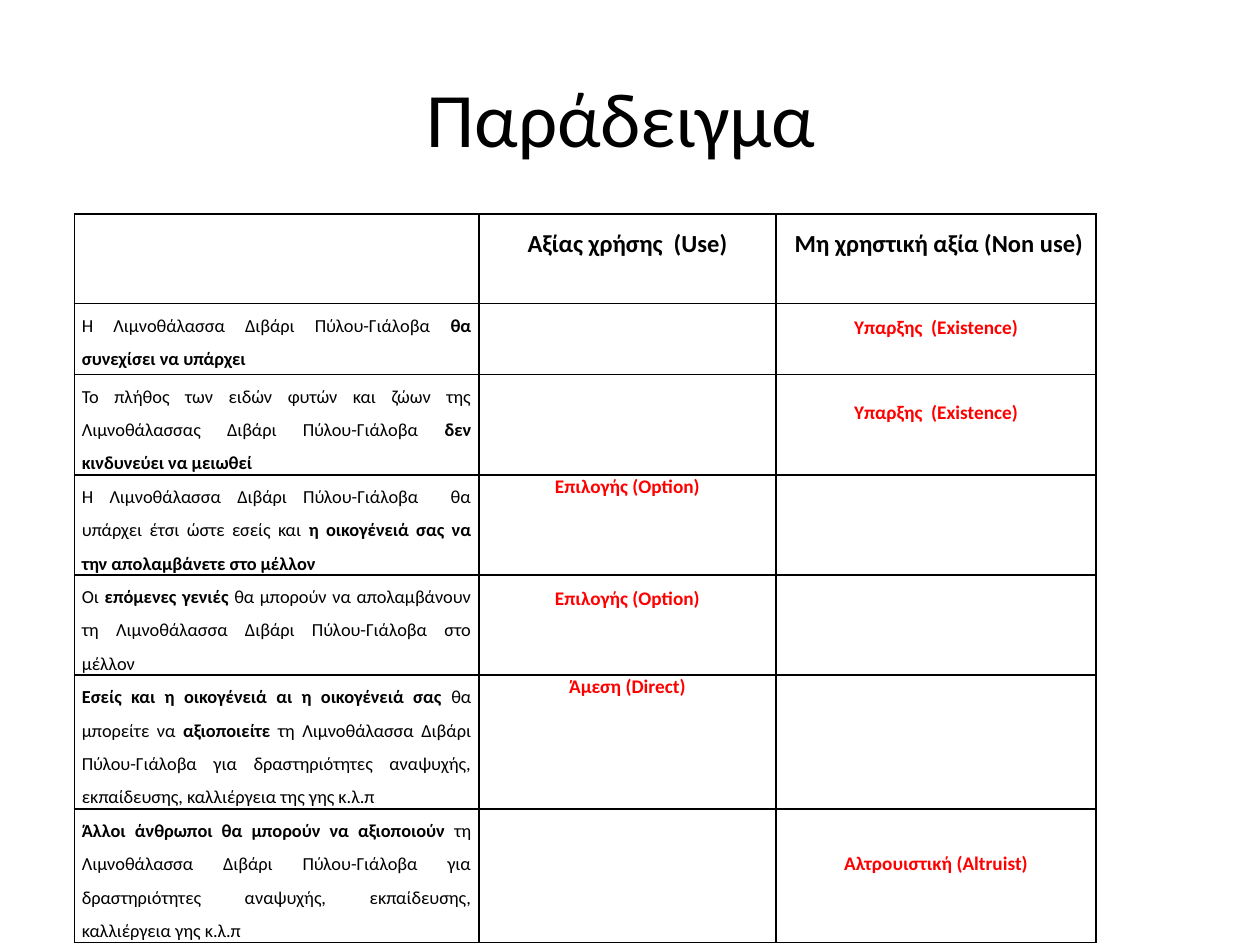
from lxml import etree
from pptx import Presentation
from pptx.dml.color import RGBColor
from pptx.enum.text import MSO_ANCHOR, PP_ALIGN
from pptx.oxml.ns import qn
from pptx.util import Inches, Pt

CENTER, JUSTIFY = PP_ALIGN.CENTER, PP_ALIGN.JUSTIFY
TOP, MIDDLE = MSO_ANCHOR.TOP, MSO_ANCHOR.MIDDLE
TITLE_ONLY = 5
FONT, BLACK, RED = "Calibri", "000000", "FF0000"

COLUMN_WIDTHS = [3.21, 2.36, 2.54]
ROW_HEIGHTS = [0.71, 0.56, 0.79, 0.79, 0.79, 1.06, 1.06]
HEADERS = ["Αξίας χρήσης  (Use)", " Μη χρηστική αξία (Non use)"]
STATEMENTS = [
    "Η Λιμνοθάλασσα Διβάρι Πύλου-Γιάλοβα *θα συνεχίσει να υπάρχει*",
    "Το πλήθος των ειδών φυτών και ζώων της Λιμνοθάλασσας Διβάρι "
    "Πύλου-Γιάλοβα *δεν κινδυνεύει να μειωθεί*",
    "Η Λιμνοθάλασσα Διβάρι Πύλου-Γιάλοβα  θα υπάρχει έτσι ώστε εσείς και "
    "*η οικογένειά σας να την απολαμβάνετε στο μέλλον*",
    "Οι *επόμενες γενιές *θα μπορούν να απολαμβάνουν τη Λιμνοθάλασσα "
    "Διβάρι Πύλου-Γιάλοβα στο μέλλον",
    "*Εσείς και η οικογένειά αι η οικογένειά σας *θα μπορείτε να "
    "*αξιοποιείτε* τη Λιμνοθάλασσα Διβάρι Πύλου-Γιάλοβα για "
    "δραστηριότητες αναψυχής, εκπαίδευσης, καλλιέργεια της γης κ.λ.π",
    "*Άλλοι άνθρωποι θα μπορούν να αξιοποιούν *τη Λιμνοθάλασσα Διβάρι "
    "Πύλου-Γιάλοβα για δραστηριότητες αναψυχής, εκπαίδευσης, "
    "καλλιέργεια γης κ.λ.π",
]
# column, text, anchor, line spacing, bottom margin
VALUES = [
    (2, "Υπαρξης  (Existence)", MIDDLE, 1.5, 0.28),
    (2, "Υπαρξης  (Existence)", MIDDLE, 1, 0.19),
    (1, "Επιλογής (Option)", TOP, 1, 0),
    (1, "Επιλογής (Option)", TOP, 1.5, 0),
    (1, "Άμεση (Direct)", TOP, 1, 0),
    (2, "Αλτρουιστική (Altruist)", MIDDLE, 1, 0.19),
]


def rgb(value):
    return RGBColor.from_string(value)


class SlideBuilder:
    """Holds the style and the current slide and adds its elements."""

    def __init__(self, presentation):
        layout = presentation.slide_layouts[TITLE_ONLY]
        self.slide = presentation.slides.add_slide(layout)

    def add_run(self, paragraph, text, size, color=BLACK, bold=False):
        run = paragraph.add_run()
        run.text = text
        run.font.name = FONT
        run.font.size = Pt(size)
        run.font.bold = bold
        run.font.color.rgb = rgb(color)

    def add_title(self, text, left, top, width, height):
        title = self.slide.shapes.title
        title.left, title.top = Inches(left), Inches(top)
        title.width, title.height = Inches(width), Inches(height)
        title.text_frame.vertical_anchor = MIDDLE
        paragraph = title.text_frame.paragraphs[0]
        paragraph.alignment = CENTER
        self.add_run(paragraph, text, 44)

    def add_table(self, left, top, column_widths, row_heights):
        frame = self.slide.shapes.add_table(
            len(row_heights), len(column_widths), Inches(left), Inches(top),
            Inches(sum(column_widths)), Inches(sum(row_heights)))
        table = frame.table
        table.first_row = table.horz_banding = False
        for column, width in zip(table.columns, column_widths):
            column.width = Inches(width)
        for row, height in zip(table.rows, row_heights):
            row.height = Inches(height)
        for cell in table.iter_cells():
            cell.fill.background()
            self.add_borders(cell)
        return table

    def add_borders(self, cell):
        properties = cell._tc.get_or_add_tcPr()
        for index, side in enumerate(("a:lnL", "a:lnR", "a:lnT", "a:lnB")):
            line = etree.Element(qn(side), w=str(Pt(1)))
            fill = etree.SubElement(line, qn("a:solidFill"))
            etree.SubElement(fill, qn("a:srgbClr"), val=BLACK)
            properties.insert(index, line)

    def fill_cell(self, cell, text, size, color=BLACK, alignment=CENTER,
                  anchor=TOP, spacing=1.5, bottom=0):
        cell.margin_left = cell.margin_right = Inches(0.06)
        cell.margin_top, cell.margin_bottom = 0, Inches(bottom)
        cell.vertical_anchor = anchor
        paragraph = cell.text_frame.paragraphs[0]
        paragraph.alignment = alignment
        paragraph.line_spacing = float(spacing)
        for index, part in enumerate(text.split("*")):
            if part:
                self.add_run(paragraph, part, size, color, index % 2 == 1)


def main():
    presentation = Presentation()
    presentation.slide_width, presentation.slide_height = Inches(10), Inches(7.5)
    builder = SlideBuilder(presentation)
    builder.add_title("Παράδειγμα ", 0.5, 0.3, 9, 1.25)
    table = builder.add_table(0.59, 1.7, COLUMN_WIDTHS, ROW_HEIGHTS)
    for column, header in enumerate(HEADERS, start=1):
        builder.fill_cell(table.cell(0, column), f"*{header}*", 14, bottom=0.35)
    for row, (statement, value) in enumerate(zip(STATEMENTS, VALUES), start=1):
        builder.fill_cell(table.cell(row, 0), statement, 10.5, alignment=JUSTIFY)
        column, text, anchor, spacing, bottom = value
        builder.fill_cell(table.cell(row, column), f"*{text}*", 11, RED,
                          anchor=anchor, spacing=spacing, bottom=bottom)
    presentation.save("out.pptx")


if __name__ == "__main__":
    main()
